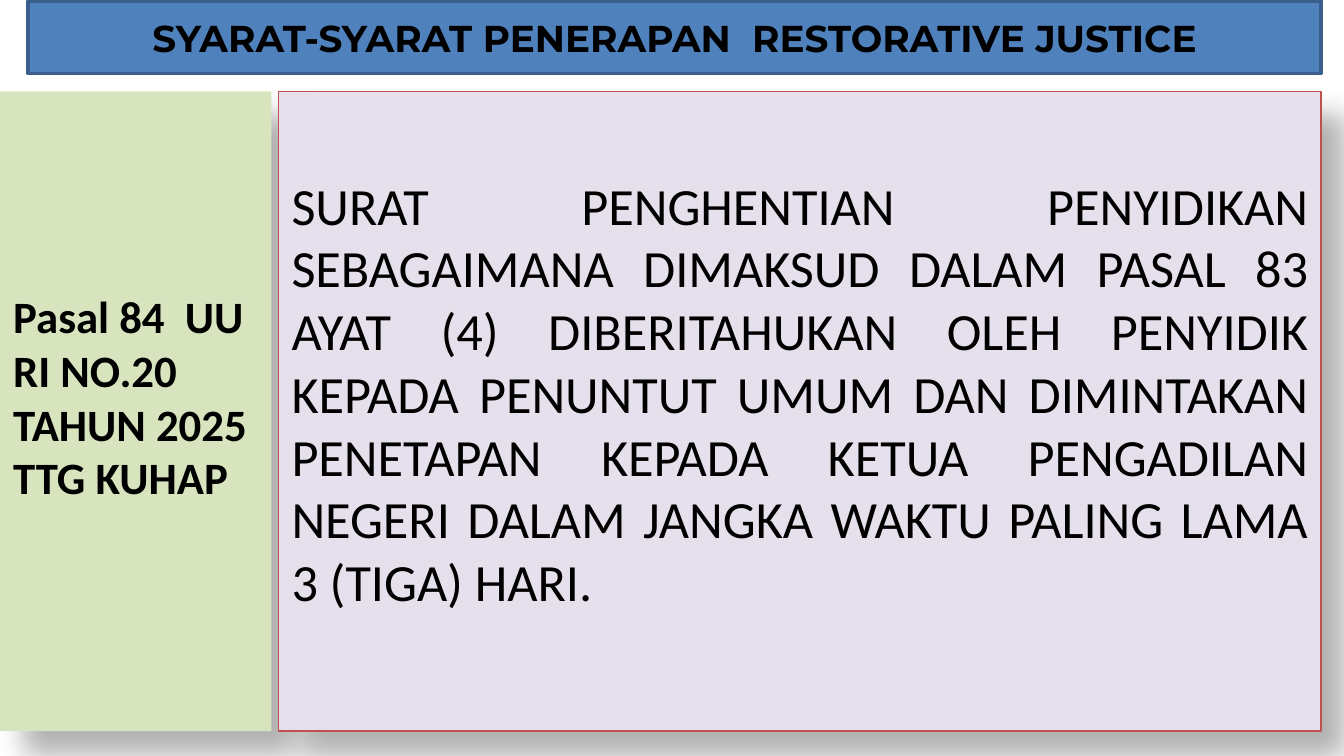
from lxml import etree
from pptx import Presentation
from pptx.dml.color import RGBColor
from pptx.enum.shapes import MSO_SHAPE
from pptx.enum.text import MSO_ANCHOR, PP_ALIGN
from pptx.oxml.ns import qn
from pptx.util import Cm, Pt

RECTANGLE = MSO_SHAPE.RECTANGLE
TOP, MIDDLE = MSO_ANCHOR.TOP, MSO_ANCHOR.MIDDLE
LEFT, CENTER, JUSTIFY = PP_ALIGN.LEFT, PP_ALIGN.CENTER, PP_ALIGN.JUSTIFY

SLIDE_WIDTH, SLIDE_HEIGHT = 25.4, 14.29
RIGHT_EDGE = 24.97
PANEL_TOP, PANEL_HEIGHT = 1.73, 12.09
SOURCE_WIDTH, PANEL_GAP = 5.13, 0.13

TITLE = "SYARAT-SYARAT PENERAPAN  RESTORATIVE JUSTICE"
SOURCE = "Pasal 84  UU RI NO.20 TAHUN 2025 TTG KUHAP"
RULE = (
    "SURAT PENGHENTIAN PENYIDIKAN SEBAGAIMANA DIMAKSUD DALAM PASAL 83 AYAT (4) "
    "DIBERITAHUKAN OLEH PENYIDIK KEPADA PENUNTUT UMUM DAN DIMINTAKAN PENETAPAN "
    "KEPADA KETUA PENGADILAN NEGERI DALAM JANGKA WAKTU PALING LAMA 3 (TIGA) HARI."
)


def color(value):
    return RGBColor.from_string(value)


def add_rectangle(slide, box, fill, line=None, line_width=0):
    shape = slide.shapes.add_shape(RECTANGLE, *(Cm(length) for length in box))
    shape.shadow.inherit = False
    shape.fill.solid()
    shape.fill.fore_color.rgb = color(fill)
    if line:
        shape.line.color.rgb = color(line)
        shape.line.width = Pt(line_width)
    else:
        shape.line.fill.background()
    return shape


def add_soft_shadow(shape):
    effects = shape._element.spPr.find(qn("a:effectLst"))
    shadow = etree.SubElement(
        effects, qn("a:outerShdw"), blurRad=str(Pt(15)), dist=str(Pt(18)),
        dir=str(45 * 60000), algn="tl", rotWithShape="0")
    tint = etree.SubElement(shadow, qn("a:srgbClr"), val="000000")
    etree.SubElement(tint, qn("a:alpha"), val="30000")


def write_text(shape, text, font_format, alignment, anchor, top_margin=0.13):
    frame = shape.text_frame
    frame.word_wrap = True
    frame.vertical_anchor = anchor
    frame.margin_top = Cm(top_margin)
    paragraph = frame.paragraphs[0]
    paragraph.text = text
    paragraph.alignment = alignment
    paragraph.font.color.rgb = color("000000")
    for name, value in font_format.items():
        setattr(paragraph.font, name, value)


def add_title_bar(slide, box):
    bar = add_rectangle(slide, box, "4F81BD", "3A5F8C", 2)
    font_format = {"name": "Montserrat", "size": Pt(20), "bold": True}
    write_text(bar, TITLE, font_format, CENTER, MIDDLE)


def add_source_panel(slide, box):
    panel = add_rectangle(slide, box, "D7E4BD")
    add_soft_shadow(panel)
    font_format = {"name": "Calibri", "size": Pt(24), "bold": True}
    write_text(panel, SOURCE, font_format, LEFT, TOP, 3.73)


def add_rule_panel(slide, box):
    panel = add_rectangle(slide, box, "E6E0EC", "C0504D", 0.75)
    add_soft_shadow(panel)
    font_format = {"name": "Calibri", "size": Pt(28), "bold": False}
    write_text(panel, RULE, font_format, JUSTIFY, TOP, 1.54)


def main():
    presentation = Presentation()
    presentation.slide_width = Cm(SLIDE_WIDTH)
    presentation.slide_height = Cm(SLIDE_HEIGHT)
    slide = presentation.slides.add_slide(presentation.slide_layouts[6])

    title_left = 0.53
    rule_left = SOURCE_WIDTH + PANEL_GAP
    add_source_panel(slide, (0, PANEL_TOP, SOURCE_WIDTH, PANEL_HEIGHT))
    add_title_bar(slide, (title_left, 0.02, RIGHT_EDGE - title_left, 1.37))
    add_rule_panel(
        slide, (rule_left, PANEL_TOP, RIGHT_EDGE - rule_left, PANEL_HEIGHT))
    presentation.save("out.pptx")


if __name__ == "__main__":
    main()
